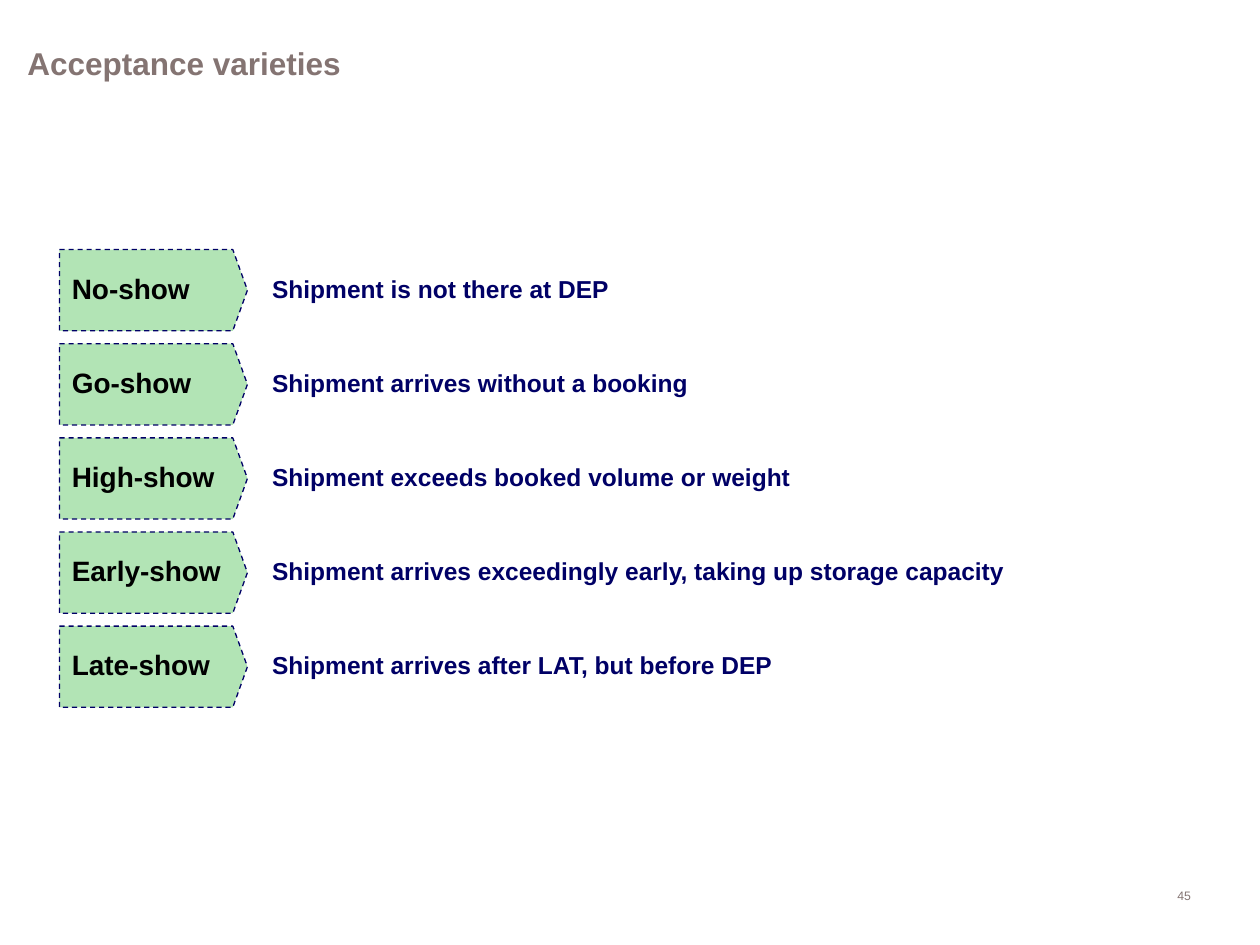
from typing import NamedTuple

from pptx import Presentation
from pptx.dml.color import RGBColor
from pptx.enum.dml import MSO_LINE_DASH_STYLE as DASH
from pptx.enum.shapes import MSO_SHAPE as SHAPE
from pptx.enum.text import MSO_ANCHOR as ANCHOR, PP_ALIGN as ALIGN
from pptx.util import Pt

GREY = RGBColor(0x84, 0x74, 0x72)
GREEN = RGBColor(0xB2, 0xE4, 0xB5)
NAVY = RGBColor(0x00, 0x00, 0x66)
BLACK = RGBColor(0x00, 0x00, 0x00)

TOP, PITCH, HEIGHT = 142.6, 53.8, 46.4
LABEL_LEFT, LABEL_WIDTH = 34, 107.4
TEXT_LEFT, TEXT_WIDTH = 148.4, 445


class Variety(NamedTuple):
    label: str
    meaning: str


VARIETIES = [
    Variety("No-show", "Shipment is not there at DEP"),
    Variety("Go-show", "Shipment arrives without a booking"),
    Variety("High-show", "Shipment exceeds booked volume or weight"),
    Variety("Early-show", "Shipment arrives exceedingly early, taking up storage capacity"),
    Variety("Late-show", "Shipment arrives after LAT, but before DEP"),
]


def write(sp, text: str, size: float, color: RGBColor, bold: bool = True,
          align=ALIGN.LEFT, right: float = 7.2, spacing: float = 0.9) -> None:
    tf = sp.text_frame
    tf.word_wrap = True
    tf.vertical_anchor = ANCHOR.MIDDLE
    tf.margin_left, tf.margin_right = Pt(7.2), Pt(right)
    tf.margin_top = tf.margin_bottom = Pt(3.6)
    p = tf.paragraphs[0]
    p.alignment = align
    p.line_spacing = spacing
    r = p.add_run()
    r.text = text
    r.font.name = "Arial"
    r.font.size = Pt(size)
    r.font.bold = bold
    r.font.color.rgb = color


def add_pentagon(s, left: float, top: float, width: float, filled: bool):
    sp = s.shapes.add_shape(SHAPE.PENTAGON, Pt(left), Pt(top), Pt(width), Pt(HEIGHT))
    sp.adjustments[0] = 0.18
    sp.shadow.inherit = False
    if filled:
        sp.fill.solid()
        sp.fill.fore_color.rgb = GREEN
        sp.line.color.rgb = NAVY
        sp.line.width = Pt(0.75)
        sp.line.dash_style = DASH.DASH
    else:
        sp.fill.background()
        sp.line.fill.background()
    return sp


def add_variety(s, variety: Variety, top: float) -> None:
    label = add_pentagon(s, LABEL_LEFT, top, LABEL_WIDTH, filled=True)
    write(label, variety.label, 16, BLACK, right=0)
    meaning = add_pentagon(s, TEXT_LEFT, top, TEXT_WIDTH, filled=False)
    write(meaning, variety.meaning, 14, NAVY, right=0)


def main() -> None:
    prs = Presentation()
    prs.slide_width, prs.slide_height = Pt(720), Pt(540)
    s = prs.slides.add_slide(prs.slide_layouts[6])

    title = s.shapes.add_textbox(Pt(8.6), Pt(9.4), Pt(620.6), Pt(56.2))
    write(title, "Acceptance varieties", 18, GREY)
    for row, variety in enumerate(VARIETIES):
        add_variety(s, variety, TOP + row * PITCH)
    number = s.shapes.add_textbox(Pt(629.3), Pt(504), Pt(58.3), Pt(15.8))
    write(number, "45", 7, GREY, bold=False, align=ALIGN.RIGHT, spacing=1.0)

    prs.save("out.pptx")


if __name__ == "__main__":
    main()
